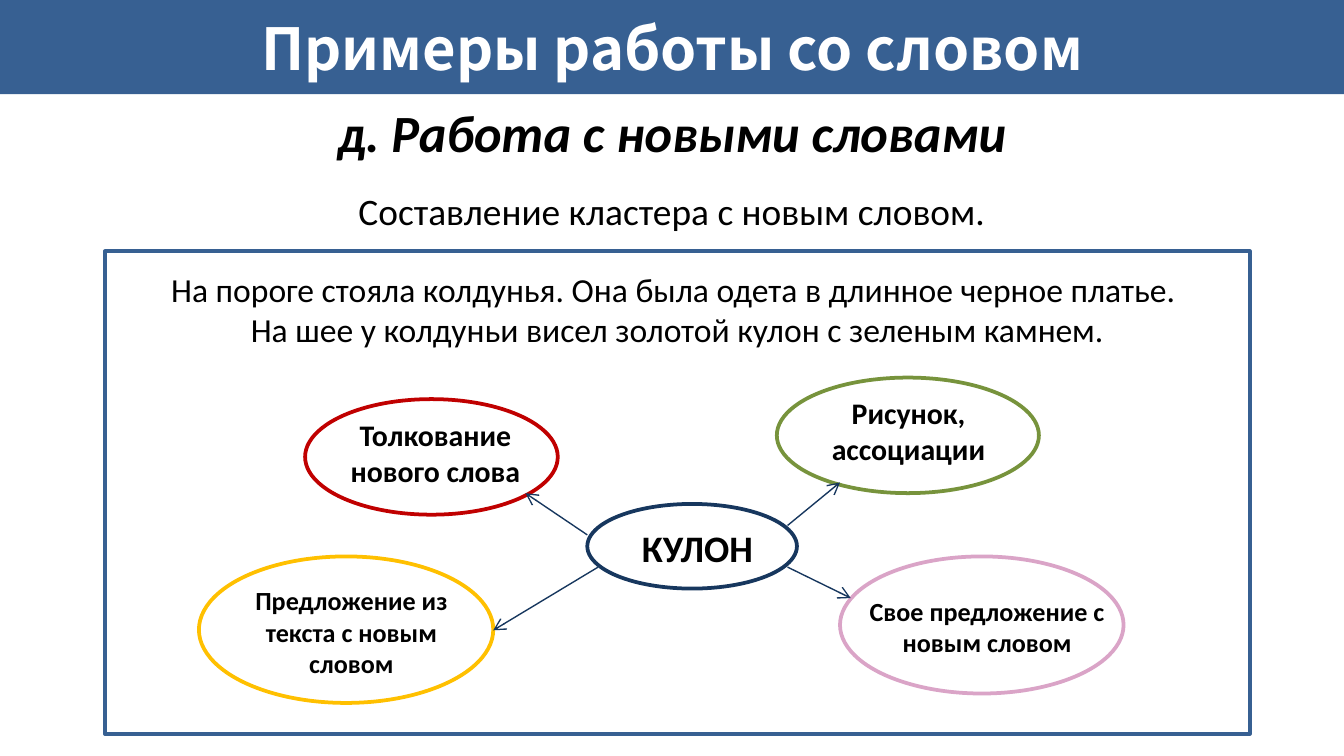
from lxml import etree
from pptx import Presentation
from pptx.dml.color import RGBColor
from pptx.enum.shapes import MSO_CONNECTOR, MSO_SHAPE
from pptx.enum.text import MSO_ANCHOR, MSO_AUTO_SIZE, PP_ALIGN
from pptx.oxml.ns import qn
from pptx.util import Inches, Pt

RECTANGLE, ELLIPSE = MSO_SHAPE.RECTANGLE, MSO_SHAPE.OVAL
STRAIGHT = MSO_CONNECTOR.STRAIGHT
CENTER, MIDDLE = PP_ALIGN.CENTER, MSO_ANCHOR.MIDDLE
NO_AUTOFIT = MSO_AUTO_SIZE.NONE

BLUE = RGBColor(0x37, 0x60, 0x92)
NAVY = RGBColor(0x17, 0x37, 0x5E)
RED = RGBColor(0xC0, 0x00, 0x00)
GREEN = RGBColor(0x77, 0x93, 0x3C)
YELLOW = RGBColor(0xFF, 0xC0, 0x00)
PINK = RGBColor(0xDA, 0xA4, 0xC7)
BLACK = RGBColor(0, 0, 0)
WHITE = RGBColor(0xFF, 0xFF, 0xFF)

# Widescreen slide, 16:9
WIDTH = 10
HEIGHT = WIDTH * 9 / 16
TITLE_HEIGHT = 0.7
FRAME_LEFT, FRAME_WIDTH = 0.78, 8.52

# Cluster: ellipse box, colour, label box, label, text size
CLUSTER = [
    ((4.37, 3.75, 1.56, 0.63), NAVY, (4.37, 3.86, 1.64, 0.44), "КУЛОН", 20),
    ((2.27, 2.97, 1.88, 0.86), RED, (2.42, 3.05, 1.64, 0.64),
     "Толкование нового слова", 16),
    ((5.78, 2.81, 1.95, 0.86), GREEN, (5.94, 2.89, 1.64, 0.64),
     "Рисунок, ассоциации", 16),
    ((1.48, 4.14, 2.19, 1.09), YELLOW, (1.64, 4.3, 1.95, 0.81),
     "Предложение из текста с новым словом", 14),
    ((6.25, 4.14, 2.11, 1.02), PINK, (6.25, 4.38, 2.19, 0.57),
     "Свое предложение с новым словом", 14),
]

# Arrows from the central word: start and end points
ARROWS = [
    ((4.37, 3.98), (3.91, 3.67)),
    ((5.86, 3.91), (6.25, 3.59)),
    ((4.45, 4.22), (3.67, 4.69)),
    ((5.86, 4.22), (6.33, 4.45)),
]


def inches(values):
    return [Inches(value) for value in values]


def format_paragraph(paragraph, size, color=BLACK, bold=False, italic=False,
                     font_name="Calibri"):
    paragraph.alignment = CENTER
    for run in paragraph.runs:
        font = run.font
        font.name, font.size = font_name, Pt(size)
        font.bold, font.italic = bold, italic
        font.color.rgb = color


def add_title(slide, text):
    title = slide.shapes.title
    title.left, title.top, title.width, title.height = inches(
        (0, 0, WIDTH, TITLE_HEIGHT))
    title.fill.solid()
    title.fill.fore_color.rgb = BLUE
    frame = title.text_frame
    frame.text = text
    frame.auto_size = NO_AUTOFIT
    frame.vertical_anchor = MIDDLE
    format_paragraph(frame.paragraphs[0], 31, WHITE, bold=True,
                     font_name="Noto Sans CJK JP")


def add_text(slide, box, lines, size, bold=False):
    frame = slide.shapes.add_textbox(*inches(box)).text_frame
    frame.word_wrap = True
    frame.text = "\n".join(lines)
    for paragraph in frame.paragraphs:
        format_paragraph(paragraph, size, bold=bold)
    return frame


def add_outline(slide, kind, box, color, fill=None):
    shape = slide.shapes.add_shape(kind, *inches(box))
    shape.shadow.inherit = False
    shape.line.color.rgb = color
    shape.line.width = Pt(2)
    if fill is None:
        shape.fill.background()
    else:
        shape.fill.solid()
        shape.fill.fore_color.rgb = fill


def add_arrow(slide, start, end):
    arrow = slide.shapes.add_connector(STRAIGHT, *inches(start + end))
    arrow.line.color.rgb = NAVY
    arrow.line.width = Pt(0.75)
    properties = arrow.element.spPr
    line = properties.find(qn("a:ln"))
    etree.SubElement(line, qn("a:tailEnd"), type="arrow")
    etree.SubElement(properties, qn("a:effectLst"))


def main():
    presentation = Presentation()
    presentation.slide_width = Inches(WIDTH)
    presentation.slide_height = Inches(HEIGHT)
    slide = presentation.slides.add_slide(presentation.slide_layouts[5])

    # Title
    add_title(slide, "Примеры работы со словом")

    # Frame behind the example and the cluster
    add_outline(slide, RECTANGLE, (FRAME_LEFT, 1.87, FRAME_WIDTH, 3.59),
                BLUE, WHITE)

    # Headings
    headings = add_text(slide, (0, TITLE_HEIGHT, WIDTH, 1.09), [
        "д. Работа с новыми словами",
        "Составление кластера с новым словом.",
    ], 20)
    heading, subheading = headings.paragraphs
    format_paragraph(heading, 28, bold=True, italic=True)
    subheading.space_before = Pt(13.4)

    # Example text
    add_text(slide, (FRAME_LEFT, 1.95, FRAME_WIDTH, 0.71), [
        "На пороге стояла колдунья. Она была одета в длинное черное платье. ",
        "На шее у колдуньи висел золотой кулон с зеленым камнем.",
    ], 18)

    # Word cluster
    for ellipse_box, color, label_box, label, size in CLUSTER:
        add_outline(slide, ELLIPSE, ellipse_box, color)
        add_text(slide, label_box, [label], size, bold=True)
    for start, end in ARROWS:
        add_arrow(slide, start, end)

    presentation.save("out.pptx")


if __name__ == "__main__":
    main()
